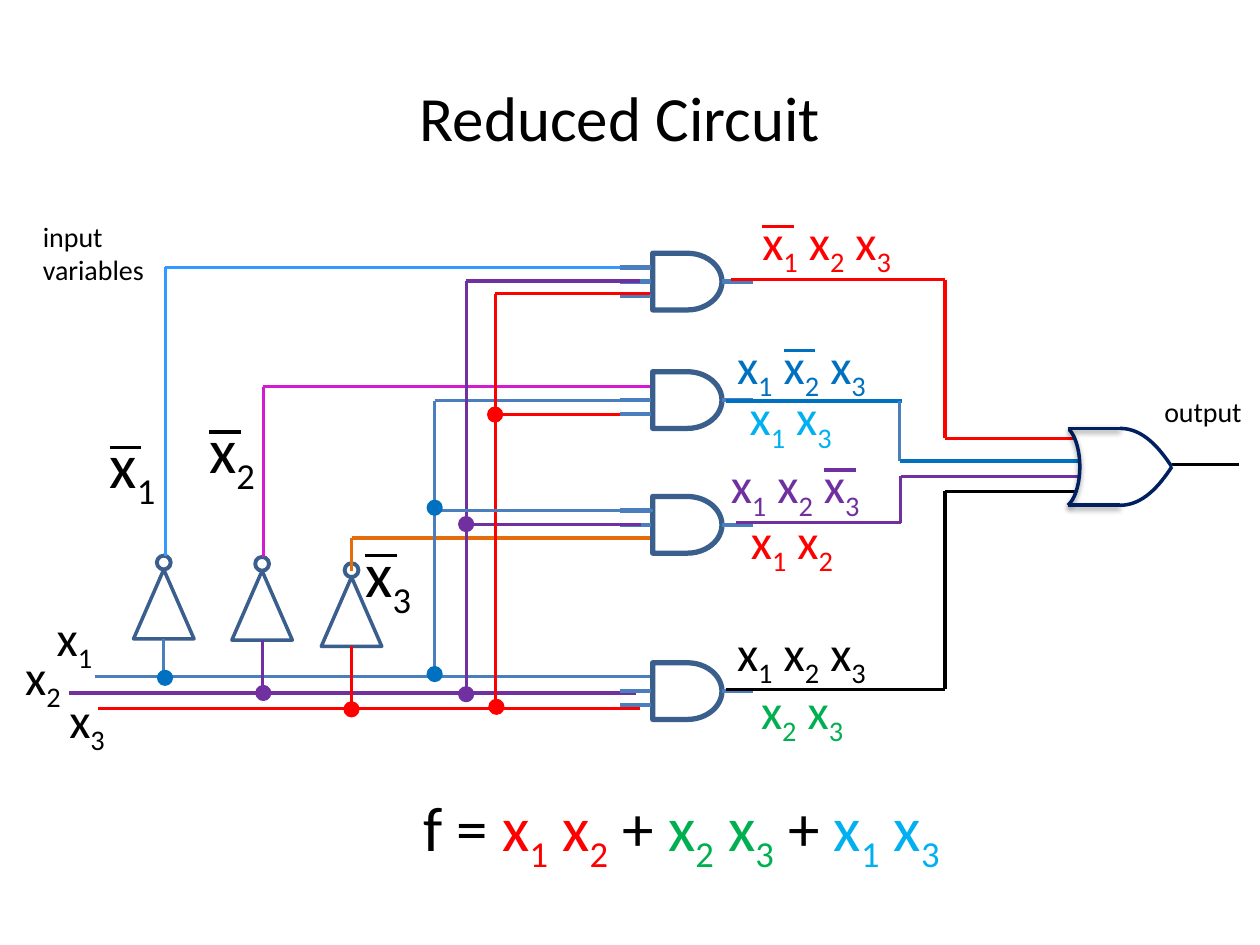
from itertools import groupby, pairwise

from lxml import etree
from pptx import Presentation
from pptx.dml.color import RGBColor
from pptx.enum.shapes import MSO_CONNECTOR, MSO_SHAPE
from pptx.enum.text import MSO_ANCHOR, PP_ALIGN
from pptx.oxml import parse_xml
from pptx.oxml.ns import qn
from pptx.util import Inches, Pt

LINE = MSO_CONNECTOR.STRAIGHT
OVAL, CONE = MSO_SHAPE.OVAL, MSO_SHAPE.ISOSCELES_TRIANGLE
DELAY, ARC = MSO_SHAPE.FLOWCHART_DELAY, MSO_SHAPE.ARC
MIDDLE, CENTER, LEFT = MSO_ANCHOR.MIDDLE, PP_ALIGN.CENTER, PP_ALIGN.LEFT

COLS, ROWS, CELL = 10, 7.5, Inches(1)
BLACK = RGBColor(0x00, 0x00, 0x00)
WHITE = RGBColor(0xFF, 0xFF, 0xFF)
RED = RGBColor(0xFF, 0x00, 0x00)
GREEN = RGBColor(0x00, 0xB0, 0x50)
BLUE = RGBColor(0x00, 0x70, 0xC0)
CYAN = RGBColor(0x00, 0xB0, 0xF0)
SKY = RGBColor(0x33, 0x99, 0xFF)
STEEL = RGBColor(0x4B, 0x7E, 0xBC)
SLATE = RGBColor(0x3A, 0x5F, 0x8C)
NAVY = RGBColor(0x00, 0x20, 0x60)
PLUM = RGBColor(0x70, 0x30, 0xA0)
PINK = RGBColor(0xD5, 0x1B, 0xD1)
RUST = RGBColor(0xE4, 0x6C, 0x0A)

SHADE = (
    '<a:effectLst xmlns:a="http://schemas.openxmlformats.org/drawingml/2006/main">'
    '<a:outerShdw blurRad="39370" dist="20320" dir="5400000" rotWithShape="0">'
    '<a:srgbClr val="000000"><a:alpha val="38000"/></a:srgbClr>'
    '</a:outerShdw></a:effectLst>'
)

FEEDS = [
    (STEEL, [(0.75, 5.37), (5.2, 5.37)]),
    (PLUM, [(0.55, 5.5), (5.05, 5.5)]),
    (RED, [(0.78, 5.62), (5.08, 5.62)]),
    (STEEL, [(1.3, 5.38), (1.3, 5.07)]),
    (PLUM, [(2.08, 5.5), (2.08, 5.08)]),
    (RED, [(2.79, 5.62), (2.79, 5.13)]),
    (SKY, [(1.31, 4.41), (1.31, 2.12), (5.17, 2.12)]),
    (PINK, [(2.09, 4.42), (2.09, 3.07), (5.17, 3.07)]),
    (RUST, [(2.79, 4.53), (2.79, 4.27), (5.18, 4.27)]),
    (STEEL, [(3.45, 5.37), (3.45, 3.18), (5.17, 3.18)]),
    (RED, [(3.93, 3.29), (5.17, 3.29)]),
]
TAPS = [
    (PLUM, [(3.7, 5.5), (3.7, 2.23), (5.08, 2.23)]),
    (PLUM, [(3.7, 4.16), (5.09, 4.16)]),
    (RED, [(3.93, 5.62), (3.93, 2.33), (5.16, 2.33)]),
    (STEEL, [(3.45, 4.05), (5.18, 4.05)]),
    (RED, [(5.8, 2.22), (7.5, 2.22), (7.5, 3.48), (8.54, 3.48)]),
    (PLUM, [(5.84, 4.15), (7.15, 4.15), (7.15, 3.78), (8.57, 3.78)]),
    (BLACK, [(5.76, 5.47), (7.5, 5.47), (7.5, 3.9), (8.55, 3.9)]),
    (BLUE, [(5.76, 3.18), (7.16, 3.18)]),
    (STEEL, [(7.14, 3.18), (7.14, 3.66)]),
    (BLUE, [(7.14, 3.66), (8.57, 3.66)]),
    (BLACK, [(9.3, 3.69), (9.83, 3.69)]),
]
DOTS = [
    (BLUE, [(1.31, 5.38), (3.45, 5.35), (3.45, 4.03)]),
    (PLUM, [(2.09, 5.5), (3.7, 5.51), (3.7, 4.16)]),
    (RED, [(2.79, 5.63), (3.94, 5.61), (3.93, 3.29)]),
]
TERMS = [
    (6.05, 1.68, "x1 x2 x3", RED, 0),
    (5.85, 2.66, "x1 x2 x3", BLUE, 1),
    (5.8, 3.61, "x1 x2 x3", PLUM, 2),
    (5.85, 4.94, "x1 x2 x3", BLACK, None),
    (5.95, 3.07, "x1 x3", CYAN, None),
    (5.96, 4.05, "x1 x2", RED, None),
    (6.04, 5.4, "x2 x3", GREEN, None),
    (0.45, 4.82, "x1", BLACK, None),
    (0.2, 5.13, "x2", BLACK, None),
    (0.55, 5.47, "x3", BLACK, None),
]
NOTS = [(0.87, 3.38, "x1"), (1.66, 3.26, "x2"), (2.9, 4.24, "x3")]
SUM = [("f = ", BLACK), ("x1 x2 ", RED), ("+ ", BLACK),
       ("x2 x3 ", GREEN), ("+ ", BLACK), ("x1 x3", CYAN)]


def emu(*sizes):
    return [round(size * CELL) for size in sizes]


def cast(shape):
    props = shape._element.spPr
    for old in props.findall(qn("a:effectLst")):
        props.remove(old)
    props.append(parse_xml(SHADE))


def rule(slide, start, end, color, weight=1.75):
    line = slide.shapes.add_connector(LINE, *emu(*start, *end))
    line.line.color.rgb = color
    line.line.width = Pt(weight)
    etree.SubElement(line._element.spPr, qn("a:effectLst"))
    return line


def style(shape, color, weight, fill=None):
    shape.shadow.inherit = False
    shape.line.color.rgb = color
    shape.line.width = Pt(weight)
    if fill is None:
        shape.fill.background()
    else:
        shape.fill.solid()
        shape.fill.fore_color.rgb = fill
    return shape


def form(slide, kind, box, color, weight, fill=None):
    return style(slide.shapes.add_shape(kind, *emu(*box)), color, weight, fill)


def text(slide, box, parts, size, align=LEFT, anchor=None, sub=True):
    frame = slide.shapes.add_textbox(*emu(*box)).text_frame
    frame.word_wrap = True
    frame.margin_left = frame.margin_right = 0
    frame.margin_top = frame.margin_bottom = 0
    if anchor is not None:
        frame.vertical_anchor = anchor
    para = frame.paragraphs[0]
    para.alignment = align
    para.font.name = "Calibri"
    para.font.size = Pt(size)
    for words, color in parts:
        for digit, chars in groupby(words, str.isdigit):
            run = para.add_run()
            run.text = "".join(chars)
            run.font.color.rgb = color
            if digit and sub:
                run._r.get_or_add_rPr().set("baseline", "-25000")


def wires(slide, box, nets):
    x, y = box[:2]
    for color, points in nets:
        weight = 2.25 if color == BLUE else 1.75
        for (a, b), (c, d) in pairwise(points):
            rule(slide, (x + a, y + b), (x + c, y + d), color, weight)


def dots(slide, box, size=0.1):
    x, y = box[:2]
    for color, points in DOTS:
        for a, b in points:
            spot = (x + a - size / 2, y + b - size / 2, size, size)
            form(slide, OVAL, spot, color, 2, color)


def invert(slide, box):
    x, y, w, h = box
    ring = h / 6
    form(slide, CONE, (x, y + ring, w, h - ring), SLATE, 2)
    form(slide, OVAL, (x + (w - ring) / 2, y, ring, ring), SLATE, 2.25, WHITE)


def conj(slide, box, pins):
    x, y, w, h = box
    body = form(slide, DELAY, box, SLATE, 3)
    for pin in pins:
        level = y + h * pin / 4
        rule(slide, (x - 0.26, level), (x - 0.01, level), STEEL, 2.5)
    mid = y + h / 2
    lead = rule(slide, (x + w, mid), (x + w + 0.25, mid), STEEL, 2.5)
    lead.begin_connect(body, 3)


def disj(slide, box):
    x, y, w, h = box
    bow = form(slide, ARC, (x - 0.2, y - 0.02, 0.29, h + 0.04), NAVY, 2)
    bow.adjustments[0], bow.adjustments[1] = 168.84, 48.41
    cast(bow)
    neck, tip, mid = x + w / 2, x + w, y + h / 2
    for edge in (y, y + h):
        cast(rule(slide, (x, edge), (neck, edge), NAVY, 2))
        bend = [(neck, edge), (neck + 0.18, edge),
                (tip - 0.1, mid + (edge - mid) / 2), (tip, mid)]
        steps = [n / 16 for n in range(17)]
        curve = [emu(*(a * (1 - t) ** 3 + 3 * b * t * (1 - t) ** 2
                       + 3 * c * t * t * (1 - t) + d * t ** 3
                       for a, b, c, d in zip(*bend))) for t in steps]
        pen = slide.shapes.build_freeform(*curve[0])
        pen.add_line_segments(curve[1:], close=False)
        style(pen.convert_to_shape(), NAVY, 2)


def labels(slide, box):
    x, y = box[:2]
    for a, b, words, color, bar in TERMS:
        text(slide, (x + a, y + b, 1.4, 0.47), [(words, color)], 28)
        if bar is not None:
            left = x + a + 0.37 * bar
            rule(slide, (left, y + b + 0.12), (left + 0.25, y + b + 0.12), color)
    for a, b, words in NOTS:
        text(slide, (x + a, y + b, 0.54, 0.61), [(words, BLACK)], 36)
        rule(slide, (x + a, y + b + 0.17), (x + a + 0.25, y + b + 0.17), BLACK, 2)
    text(slide, (x + 0.34, y + 1.74, 1, 0.54), [("input variables", BLACK)], 16)
    text(slide, (x + 9.24, y + 3.13, 0.75, 0.27), [("output", BLACK)], 16)


def main():
    deck = Presentation()
    deck.slide_width, deck.slide_height = emu(COLS, ROWS)
    slide = deck.slides.add_slide(deck.slide_layouts[6])
    page = (0, 0, COLS, ROWS)
    text(slide, (0.17, 0.3, 9.5, 1.25), [("Reduced Circuit", BLACK)], 36, CENTER, MIDDLE)
    for x, y in [(1.06, 4.41), (1.84, 4.42), (2.55, 4.47)]:
        invert(slide, (x, y, 0.48, 0.66))
    wires(slide, page, FEEDS)
    for y, pins in [(2.01, (1, 2, 3)), (2.95, (2, 3)), (3.94, (1, 2)), (5.26, (2, 3))]:
        conj(slide, (5.18, y, 0.55, 0.45), pins)
    wires(slide, page, TAPS)
    disj(slide, (8.48, 3.4, 0.82, 0.61))
    dots(slide, page)
    labels(slide, page)
    text(slide, (3.36, 6.26, 4.5, 0.61), SUM, 36)
    deck.save("out.pptx")


if __name__ == "__main__":
    main()
